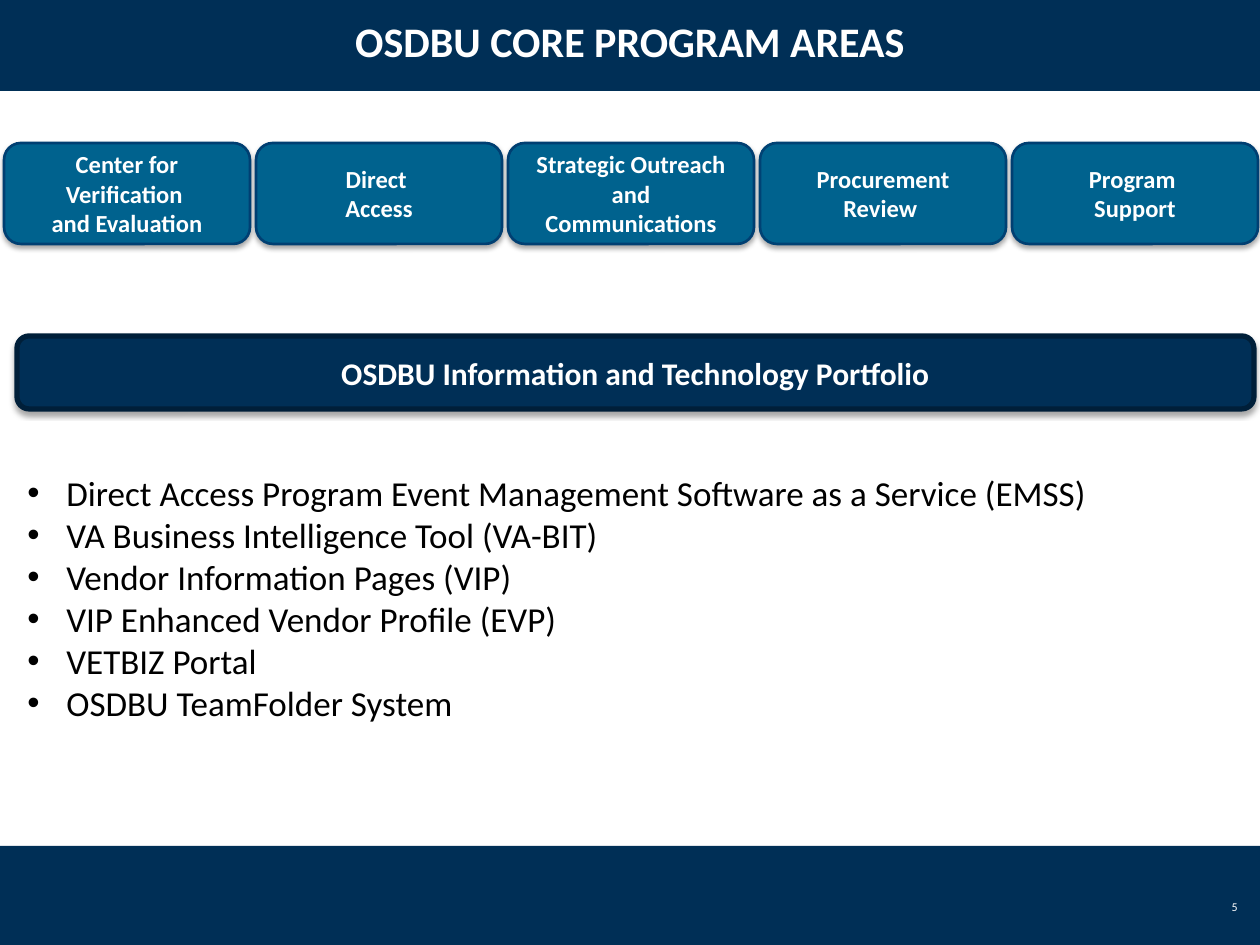
from dataclasses import dataclass
from typing import Any

from lxml import etree
from pptx import Presentation
from pptx.dml.color import RGBColor
from pptx.enum.shapes import MSO_SHAPE
from pptx.enum.text import MSO_ANCHOR, PP_ALIGN
from pptx.oxml.ns import qn
from pptx.util import Emu, Pt

RECTANGLE, ROUNDED = MSO_SHAPE.RECTANGLE, MSO_SHAPE.ROUNDED_RECTANGLE
MIDDLE, TOP = MSO_ANCHOR.MIDDLE, MSO_ANCHOR.TOP
LEFT, CENTER, RIGHT = PP_ALIGN.LEFT, PP_ALIGN.CENTER, PP_ALIGN.RIGHT

EMU_PER_PX = 914400 / 126
SLIDE_WIDTH, SLIDE_HEIGHT = 1260, 945
BAND_HEIGHT = 101
AREA_LEFT, AREA_TOP, AREA_PITCH = 4, 143, 252
AREA_WIDTH, AREA_HEIGHT = 246, 101
BULLET_INDENT = 39

COLORS = {
    "navy": "002F56",
    "navy line": "001F39",
    "teal": "00628E",
    "teal line": "003F72",
    "blue line": "004274",
    "white": "FFFFFF",
    "black": "000000",
}


@dataclass(frozen=True)
class Box:
    left: int
    top: int
    width: int
    height: int


@dataclass(frozen=True)
class TextStyle:
    size: float
    color: str = "white"
    bold: bool = False
    align: Any = CENTER
    anchor: Any = MIDDLE
    bullet: str = ""


@dataclass(frozen=True)
class ProgramArea:
    lines: tuple[str, ...]
    line: str = "teal line"


AREAS = (
    ProgramArea(("Center for Verification ", "and Evaluation")),
    ProgramArea(("Direct ", "Access")),
    ProgramArea(("Strategic Outreach and Communications",)),
    ProgramArea(("Procurement Review ",), "blue line"),
    ProgramArea(("Program ", "Support")),
)
PORTFOLIO = (
    "Direct Access Program Event Management Software as a Service (EMSS)",
    "VA Business Intelligence Tool (VA-BIT)",
    "Vendor Information Pages (VIP)",
    "VIP Enhanced Vendor Profile (EVP)",
    "VETBIZ Portal",
    "OSDBU TeamFolder System",
)


def px(value: int) -> Emu:
    return Emu(round(value * EMU_PER_PX))


def bounds(box: Box) -> tuple[Emu, ...]:
    return tuple(px(value) for value in (box.left, box.top, box.width, box.height))


def rgb(name: str) -> RGBColor:
    return RGBColor.from_string(COLORS[name])


def add_bullet(paragraph: Any, character: str) -> None:
    properties = paragraph._p.get_or_add_pPr()
    properties.set("marL", str(px(BULLET_INDENT)))
    properties.set("indent", str(-px(BULLET_INDENT)))
    etree.SubElement(properties, qn("a:buFont"), typeface="Arial")
    etree.SubElement(properties, qn("a:buChar"), char=character)


def write_text(shape: Any, lines: tuple[str, ...], style: TextStyle) -> None:
    frame = shape.text_frame
    frame.word_wrap = True
    frame.vertical_anchor = style.anchor
    frame.text = "\n".join(lines)
    font_values = {"name": "Calibri", "size": Pt(style.size), "bold": style.bold}
    for paragraph in frame.paragraphs:
        paragraph.alignment = style.align
        if style.bullet:
            add_bullet(paragraph, style.bullet)
        for run in paragraph.runs:
            for attribute, value in font_values.items():
                setattr(run.font, attribute, value)
            run.font.color.rgb = rgb(style.color)


def add_shadow(shape: Any) -> None:
    effects = etree.SubElement(shape._element.spPr, qn("a:effectLst"))
    shadow = etree.SubElement(effects, qn("a:outerShdw"), blurRad=str(Pt(3.1)),
                              dist=str(Pt(1.8)), dir="5400000", rotWithShape="0")
    color = etree.SubElement(shadow, qn("a:srgbClr"), val=COLORS["black"])
    etree.SubElement(color, qn("a:alpha"), val="35000")


def add_band(slide: Any, top: int) -> None:
    band = slide.shapes.add_shape(RECTANGLE, *bounds(Box(0, top, SLIDE_WIDTH, BAND_HEIGHT)))
    band.shadow.inherit = False
    band.fill.solid()
    band.fill.fore_color.rgb = rgb("navy")
    band.line.fill.background()
    # Bands lie behind the title
    slide.shapes._spTree.insert(2, band._element)


def add_button(slide: Any, box: Box, lines: tuple[str, ...], fill: str,
               line: str, line_width: float, size: float) -> None:
    button = slide.shapes.add_shape(ROUNDED, *bounds(box))
    button.fill.solid()
    button.fill.fore_color.rgb = rgb(fill)
    button.line.color.rgb = rgb(line)
    button.line.width = Pt(line_width)
    add_shadow(button)
    write_text(button, lines, TextStyle(size, bold=True))


def add_text(slide: Any, box: Box, lines: tuple[str, ...], style: TextStyle) -> None:
    write_text(slide.shapes.add_textbox(*bounds(box)), lines, style)


def main() -> None:
    presentation = Presentation()
    presentation.slide_width = px(SLIDE_WIDTH)
    presentation.slide_height = px(SLIDE_HEIGHT)
    slide = presentation.slides.add_slide(presentation.slide_layouts[5])

    # Header and footer
    for top in (-10, 846):
        add_band(slide, top)
    title = slide.shapes.title
    title.left, title.top, title.width, title.height = bounds(
        Box(0, -10, SLIDE_WIDTH, BAND_HEIGHT))
    write_text(title, ("OSDBU CORE PROGRAM AREAS",), TextStyle(24, bold=True))
    add_text(slide, Box(1197, 882, 53, 50), ("5",), TextStyle(6.8, align=RIGHT))

    # Row of program areas
    for index, area in enumerate(AREAS):
        box = Box(AREA_LEFT + index * AREA_PITCH, AREA_TOP, AREA_WIDTH, AREA_HEIGHT)
        add_button(slide, box, area.lines, "teal", area.line, 1.5, 14)

    # Portfolio heading and list
    add_button(slide, Box(17, 336, 1237, 73),
               ("OSDBU Information and Technology Portfolio",),
               "navy", "navy line", 3, 18)
    add_text(slide, Box(15, 465, 1237, 344), PORTFOLIO,
             TextStyle(20, "black", align=LEFT, anchor=TOP, bullet="•"))

    presentation.save("out.pptx")


if __name__ == "__main__":
    main()
